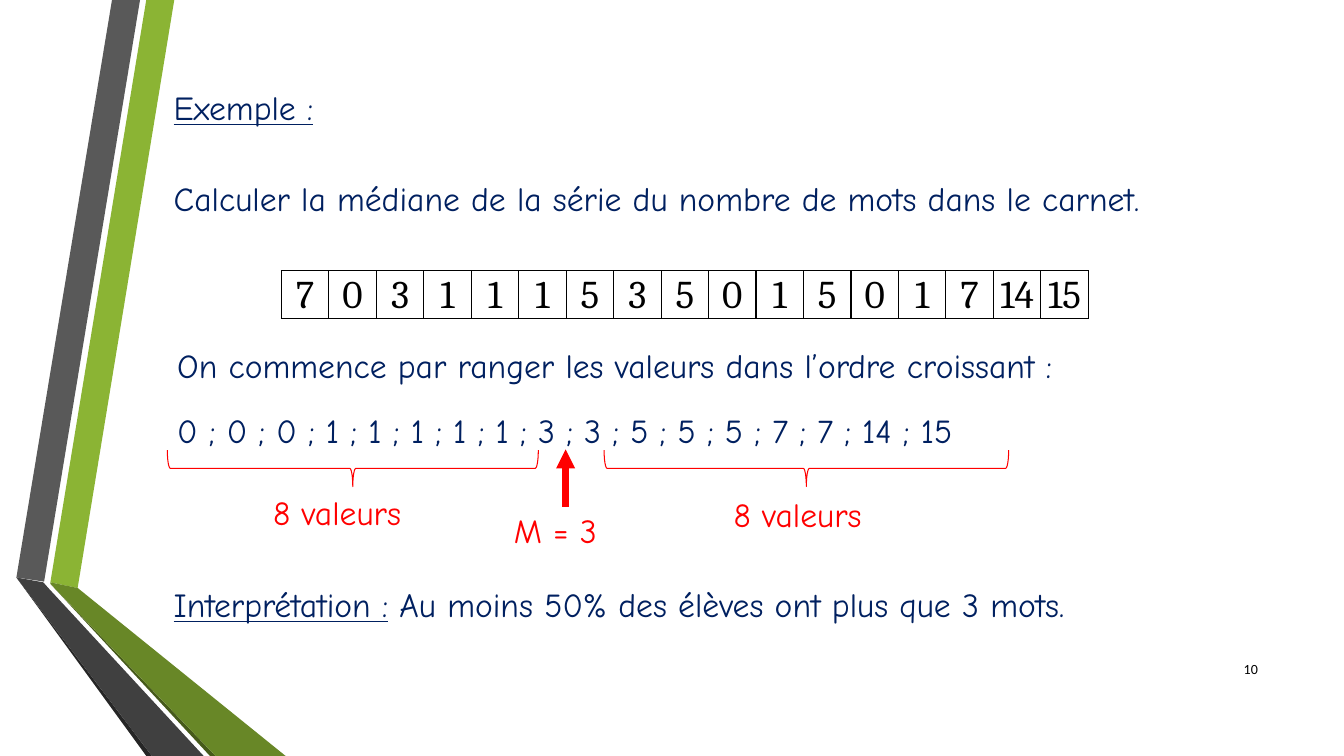
import pptx
import pptx.dml.color
import pptx.enum.shapes
import pptx.enum.text
import pptx.oxml
import pptx.oxml.ns
import pptx.util

Pt = pptx.util.Pt
ALIGN = pptx.enum.text.PP_ALIGN
ANCHOR = pptx.enum.text.MSO_ANCHOR
NAVY, RED, BLACK = "002060", "FF0000", "000000"
BODY_FONT = "Comic Neue"

# Ribbon facets from back to front: fill and corners in points
RIBBON = [
    ("8BB434", [(36, 416), (55.5, 420), (124.5, 0), (104.5, 0)]),
    ("595959", [(100, 0), (80, 0), (11.7, 412.5), (31.5, 415.5)]),
    ("262626", [(11.7, 412.5), (104.5, 540), (108.5, 540)]),
    ("465A1A", [(36, 417), (150, 540), (154, 540)]),
    ("688727", [(36, 417), (154, 540), (204, 540), (55.5, 420), (36, 416)]),
    ("404040", [(145.5, 540), (34.5, 420), (31, 416), (11.7, 412.5), (108.5, 540)]),
]
WORD_COUNTS = [7, 0, 3, 1, 1, 1, 5, 3, 5, 0, 1, 5, 0, 1, 7, 14, 15]


def rgb(color):
    return pptx.dml.color.RGBColor.from_string(color)


def add_run(p, text, size, color, font=BODY_FONT, underline=None):
    r = p.add_run()
    r.text = text
    r.font.size = Pt(size)
    r.font.name = font
    r.font.color.rgb = rgb(color)
    r.font.underline = underline


def add_box(slide, left, top, width, height):
    tf = slide.shapes.add_textbox(Pt(left), Pt(top), Pt(width), Pt(height)).text_frame
    tf.word_wrap = True
    return tf


def add_line_of_text(slide, left, top, width, text, color=NAVY, heading=""):
    p = add_box(slide, left, top, width, 36).paragraphs[0]
    if heading:
        add_run(p, heading, 24, color, underline=True)
    if text:
        add_run(p, text, 24, color)


def add_facet(slide, color, corners):
    points = [(Pt(x), Pt(y)) for x, y in corners]
    builder = slide.shapes.build_freeform(*points[0], scale=1.0)
    builder.add_line_segments(points[1:], close=True)
    sp = builder.convert_to_shape()
    sp.shadow.inherit = False
    sp.fill.solid()
    sp.fill.fore_color.rgb = rgb(color)
    sp.line.fill.background()


def add_cell_borders(cell):
    props = cell._tc.get_or_add_tcPr()
    for position, side in enumerate(("lnL", "lnR", "lnT", "lnB")):
        props.insert(position, pptx.oxml.parse_xml(
            f'<a:{side} {pptx.oxml.ns.nsdecls("a")} w="12700"><a:solidFill>'
            f'<a:srgbClr val="{BLACK}"/></a:solidFill></a:{side}>'))


def add_value_row(slide, values, left, top, width, height):
    table = slide.shapes.add_table(
        1, len(values), Pt(left), Pt(top), Pt(width), Pt(height)).table
    table.first_row = table.horz_banding = False
    for i, value in enumerate(values):
        table.columns[i].width = Pt(width / len(values))
        cell = table.cell(0, i)
        cell.fill.background()
        cell.margin_left = cell.margin_right = 0
        cell.margin_top = cell.margin_bottom = 0
        cell.vertical_anchor = ANCHOR.BOTTOM
        p = cell.text_frame.paragraphs[0]
        p.alignment = ALIGN.CENTER
        add_run(p, str(value), 28, BLACK, "Cambria")
        add_cell_borders(cell)


def add_brace_below(slide, left, top, width, height):
    # A left brace turned to point down: its own width and height are swapped
    shift = (width - height) / 2
    sp = slide.shapes.add_shape(
        pptx.enum.shapes.MSO_SHAPE.LEFT_BRACE,
        Pt(left + shift), Pt(top - shift), Pt(height), Pt(width))
    sp.rotation = 270
    sp.shadow.inherit = False
    sp.fill.background()
    sp.line.color.rgb = rgb(RED)
    sp.line.width = Pt(0.75)


def add_up_arrow(slide, x, bottom, top):
    arrow = slide.shapes.add_connector(
        pptx.enum.shapes.MSO_CONNECTOR.STRAIGHT, Pt(x), Pt(bottom), Pt(x), Pt(top))
    arrow.line.color.rgb = rgb(RED)
    arrow.line.width = Pt(4.5)
    ns = pptx.oxml.ns.nsdecls("a")
    arrow.line._get_or_add_ln().append(
        pptx.oxml.parse_xml(f'<a:tailEnd {ns} type="triangle"/>'))
    arrow._element.spPr.append(pptx.oxml.parse_xml(f"<a:effectLst {ns}/>"))


def add_page_number(slide, number):
    tf = add_box(slide, 862.5, 463, 43, 29)
    tf.vertical_anchor = ANCHOR.MIDDLE
    p = tf.paragraphs[0]
    p.alignment = ALIGN.RIGHT
    add_run(p, number, 10, BLACK, "Calibri")


def main():
    prs = pptx.Presentation()
    prs.slide_width, prs.slide_height = Pt(960), Pt(540)
    slide = prs.slides.add_slide(prs.slide_layouts[6])

    # Ribbon on the left edge
    for color, corners in RIBBON:
        add_facet(slide, color, corners)
    add_page_number(slide, "10")

    # Question and data
    add_line_of_text(slide, 117, 58.5, 800, "", heading="Exemple :")
    add_line_of_text(slide, 117, 123.5, 774,
                     "Calculer la médiane de la série du nombre de mots dans le carnet.")
    add_value_row(slide, WORD_COUNTS, 201, 193.5, 576.5, 34)

    # Sorted values
    add_line_of_text(slide, 119.5, 242.5, 774,
                     "On commence par ranger les valeurs dans l’ordre croissant :")
    add_line_of_text(slide, 119.5, 289.5, 774, " ; ".join(map(str, sorted(WORD_COUNTS))))

    # The two halves and the median
    add_brace_below(slide, 119.5, 321.5, 265, 26)
    add_brace_below(slide, 431.5, 321.5, 289, 26)
    add_line_of_text(slide, 188, 348, 130, "8 valeurs", RED)
    add_line_of_text(slide, 517, 349, 130, "8 valeurs", RED)
    add_up_arrow(slide, 404, 362, 321)
    add_line_of_text(slide, 360, 360.5, 130, "M = 3", RED)

    # Conclusion
    add_line_of_text(slide, 117, 413.5, 774, " Au moins 50% des élèves ont plus que 3 mots.",
                     heading="Interprétation :")
    prs.save("out.pptx")


if __name__ == "__main__":
    main()
